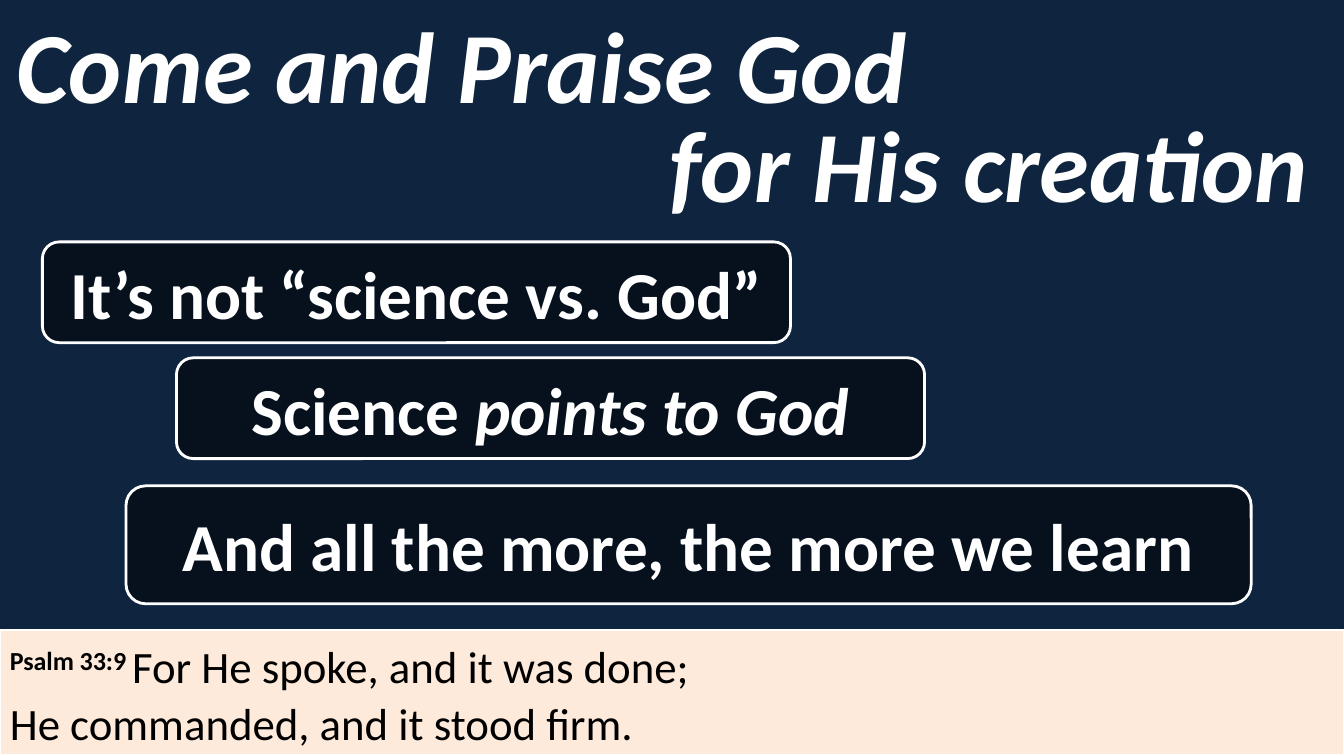
import pptx
import pptx.dml.color
import pptx.enum.shapes
import pptx.enum.text
import pptx.oxml.ns
import pptx.util
from lxml import etree

Inches = pptx.util.Inches
Pt = pptx.util.Pt
RGBColor = pptx.dml.color.RGBColor
Shape = pptx.enum.shapes.MSO_SHAPE
Align = pptx.enum.text.PP_ALIGN
Anchor = pptx.enum.text.MSO_ANCHOR

NAVY = RGBColor(0x0F, 0x24, 0x3E)
CREAM = RGBColor(0xFD, 0xEA, 0xDA)
WHITE = RGBColor(0xFF, 0xFF, 0xFF)
BLACK = RGBColor(0x00, 0x00, 0x00)


class PraiseSlide:
    """Holds the style and the current slide."""

    font_name = "Calibri"
    heading_size = 72
    point_size = 48
    verse_size = 32

    def __init__(self, deck):
        self.page = deck.slides.add_slide(deck.slide_layouts[5])
        self.page.background.fill.solid()
        self.page.background.fill.fore_color.rgb = NAVY

    def style(self, para, size, color, bold, italic=False, align=Align.LEFT):
        para.alignment = align
        para.font.name = self.font_name
        para.font.size = Pt(size)
        para.font.color.rgb = color
        para.font.bold = bold
        para.font.italic = italic

    def frame(self, shape, anchor):
        frame = shape.text_frame
        frame.word_wrap = True
        frame.auto_size = pptx.enum.text.MSO_AUTO_SIZE.NONE
        frame.vertical_anchor = anchor
        return frame.paragraphs[0]

    def shape(self, kind, area, fill=None, line_width=None):
        shape = self.page.shapes.add_shape(kind, *map(Inches, area))
        shape.shadow.inherit = False
        if fill is None:
            shape.fill.background()
        else:
            shape.fill.solid()
            shape.fill.fore_color.rgb = fill
        if line_width is None:
            shape.line.fill.background()
        else:
            shape.line.color.rgb = WHITE
            shape.line.width = Pt(line_width)
        return shape

    def title(self, text, area):
        title = self.page.shapes.title
        title.left, title.top, title.width, title.height = map(Inches, area)
        para = self.frame(title, Anchor.MIDDLE)
        para.text = text
        self.style(para, self.heading_size, WHITE, True, True, Align.CENTER)

    def subtitle(self, text, area):
        callout = self.shape(Shape.ROUNDED_RECTANGULAR_CALLOUT, area)
        for index, value in enumerate((-0.22, 0.5, 0.17)):
            callout.adjustments[index] = value
        para = self.frame(callout, Anchor.MIDDLE)
        para.text = text
        self.style(para, self.heading_size, WHITE, True, True)

    def point(self, area, text, emphasis=""):
        box = self.shape(Shape.ROUNDED_RECTANGLE, area, BLACK, 2)
        # Half-transparent fill
        color = box.fill._xPr.find(".//" + pptx.oxml.ns.qn("a:srgbClr"))
        etree.SubElement(color, pptx.oxml.ns.qn("a:alpha"), val="50000")
        para = self.frame(box, Anchor.MIDDLE)
        self.style(para, self.point_size, WHITE, True, align=Align.CENTER)
        para.add_run().text = text
        if emphasis:
            span = para.add_run()
            span.text = emphasis
            span.font.italic = True

    def verse(self, area, reference, lines):
        box = self.shape(Shape.RECTANGLE, area, CREAM, 1.5)
        para = self.frame(box, Anchor.TOP)
        self.style(para, self.verse_size, BLACK, False)
        para.line_spacing = 1.07
        # Raised verse reference
        span = para.add_run()
        span.text = reference
        span.font.bold = True
        span._r.get_or_add_rPr().set("baseline", "30000")
        for index, line in enumerate(lines):
            if index:
                para.add_line_break()
            para.add_run().text = line


def main():
    deck = pptx.Presentation()
    deck.slide_width = Inches(13.33)
    deck.slide_height = Inches(7.5)
    slide = PraiseSlide(deck)

    # Bible verse
    slide.verse((0, 6.25, 13.33, 1.24), "Psalm 33:9 ",
                ("For He spoke, and it was done;",
                 "He commanded, and it stood firm."))

    # Heading in two staggered lines
    slide.title("Come and Praise God", (0, 0, 9.17, 1.25))
    slide.subtitle("for His creation", (6.5, 1.16, 6.75, 0.89))

    # Main points
    slide.point((0.42, 2.4, 7.42, 1), "It’s not “science vs. God”")
    slide.point((1.25, 4.82, 11.16, 1.17), "And all the more, the more we learn")
    slide.point((1.75, 3.55, 7.42, 1), "Science ", "points to God")

    deck.save("out.pptx")


if __name__ == "__main__":
    main()
